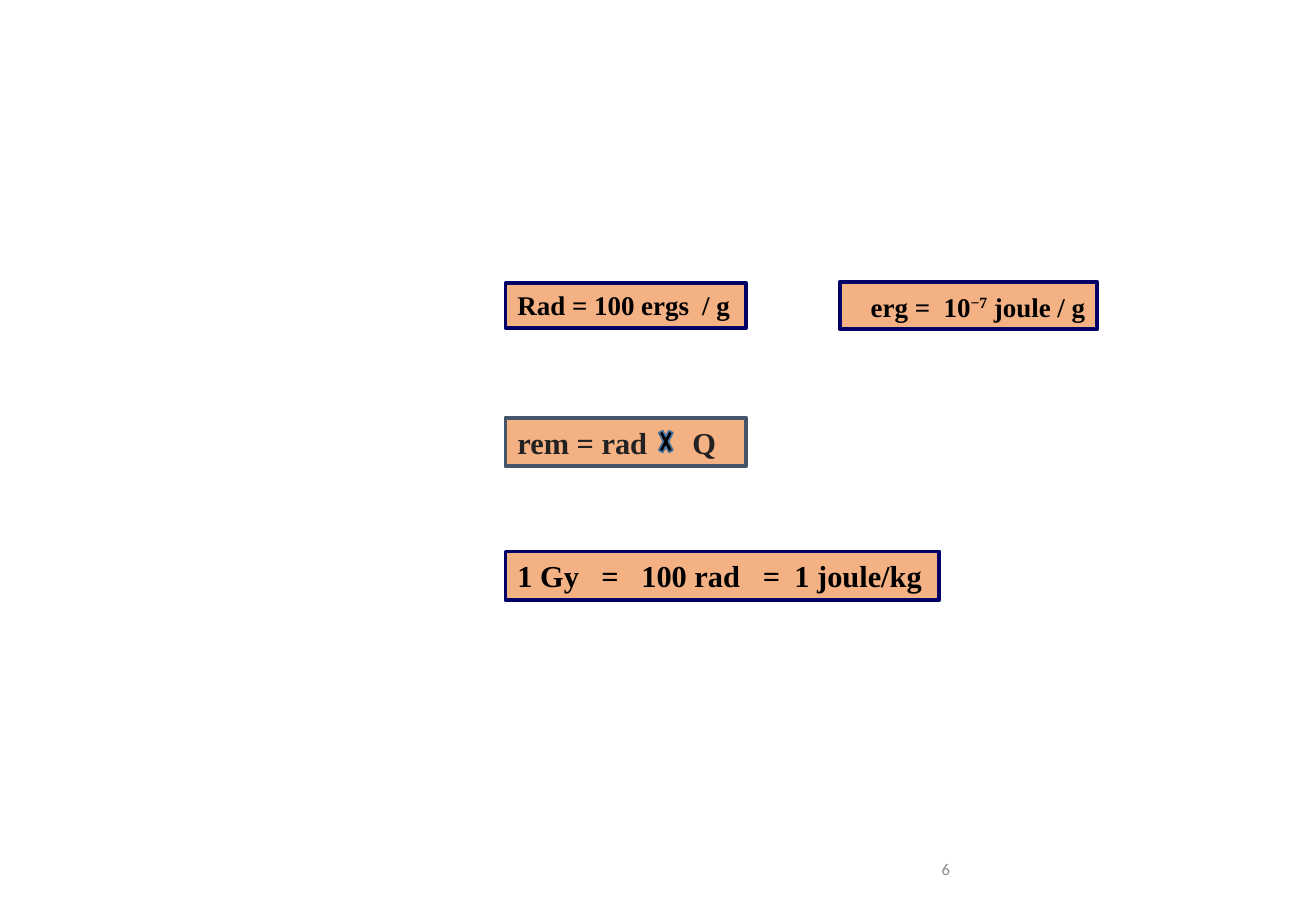
from lxml import etree
from pptx import Presentation
from pptx.dml.color import RGBColor
from pptx.enum.shapes import MSO_SHAPE
from pptx.enum.text import MSO_ANCHOR, PP_ALIGN
from pptx.oxml.ns import qn
from pptx.util import Pt

PX = 9144
RECT, MULTIPLY = MSO_SHAPE.RECTANGLE, MSO_SHAPE.MATH_MULTIPLY
LEFT, RIGHT = PP_ALIGN.LEFT, PP_ALIGN.RIGHT
MIDDLE, TOP = MSO_ANCHOR.MIDDLE, MSO_ANCHOR.TOP
BLACK = RGBColor(0x00, 0x00, 0x00)
CHARCOAL = RGBColor(0x22, 0x22, 0x22)
GRAY = RGBColor(0x8C, 0x8C, 0x8C)
PEACH = RGBColor(0xF4, 0xB1, 0x83)
NAVY = RGBColor(0x00, 0x00, 0x66)
SLATE = RGBColor(0x44, 0x54, 0x6A)
BLUE = RGBColor(0x43, 0x73, 0x9E)
COLUMN = 416


def emu(*lengths):
    """Turn px lengths into EMU."""
    return [length * PX for length in lengths]


def style_run(r, size, color, name="Times New Roman", bold=True):
    """Set the font of one run."""
    r.font.name, r.font.size, r.font.bold = name, Pt(size), bold
    r.font.color.rgb = color


def add_tabs(p, stops):
    """Give a paragraph left tab stops at px positions."""
    tabs = etree.SubElement(p._p.get_or_add_pPr(), qn("a:tabLst"))
    for pos in emu(*stops):
        etree.SubElement(tabs, qn("a:tab"), pos=str(pos), algn="l")


def add_shape(s, kind, box, fill, line, width):
    """Add a filled and outlined preset shape."""
    sp = s.shapes.add_shape(kind, *emu(*box))
    sp.shadow.inherit = False
    sp.fill.solid()
    sp.fill.fore_color.rgb = fill
    sp.line.color.rgb = line
    sp.line.width = Pt(width)
    return sp


def add_formula(s, box, text, size, color=BLACK, line=NAVY, stops=()):
    """Add a formula box and return its paragraph."""
    tf = add_shape(s, RECT, box, PEACH, line, 2.25).text_frame
    tf.word_wrap = True
    tf.vertical_anchor = TOP
    tf.margin_right = 0
    p = tf.paragraphs[0]
    p.text = text
    p.alignment = LEFT
    style_run(p.runs[0], size, color)
    if stops:
        add_tabs(p, stops)
    return p


def add_erg(s, box):
    """Add the right-aligned erg formula with its raised exponent."""
    p = add_formula(s, box, "erg =  10", 16)
    p.alignment = RIGHT
    p.line_spacing = 1.07
    p.space_after = Pt(8)
    for text in ("−7", " joule / g"):
        r = p.add_run()
        r.text = text
        style_run(r, 16, BLACK)
    p.runs[1].font._element.set("baseline", "30000")
    s.shapes[-1].text_frame.margin_right = 10 * PX


def add_number(s, box, text):
    """Add the slide number."""
    tf = s.shapes.add_textbox(*emu(*box)).text_frame
    tf.word_wrap = True
    tf.vertical_anchor = MIDDLE
    tf.text = text
    style_run(tf.paragraphs[0].runs[0], 9.8, GRAY, "Calibri", False)


def main():
    """Build the radiation units slide."""
    prs = Presentation()
    prs.slide_width, prs.slide_height = emu(1083, 750)
    s = prs.slides.add_slide(prs.slide_layouts[6])
    add_number(s, (765, 695, 244, 40), "6")
    add_formula(s, (COLUMN, 233, 198, 37), "Rad = 100 ergs\t/ g", 16, stops=(152,))
    add_formula(s, (COLUMN, 344, 198, 40), "rem = rad\tQ", 18, CHARCOAL, SLATE, (144,))
    add_shape(s, MULTIPLY, (540, 348, 16, 31), BLACK, BLUE, 1)
    add_formula(s, (COLUMN, 454, 357, 40), "1 Gy\t=\t100 rad\t=\t1 joule/kg", 18,
                stops=(69, 102, 202, 228))
    add_erg(s, (691, 232, 212, 39))
    prs.save("out.pptx")


if __name__ == "__main__":
    main()
